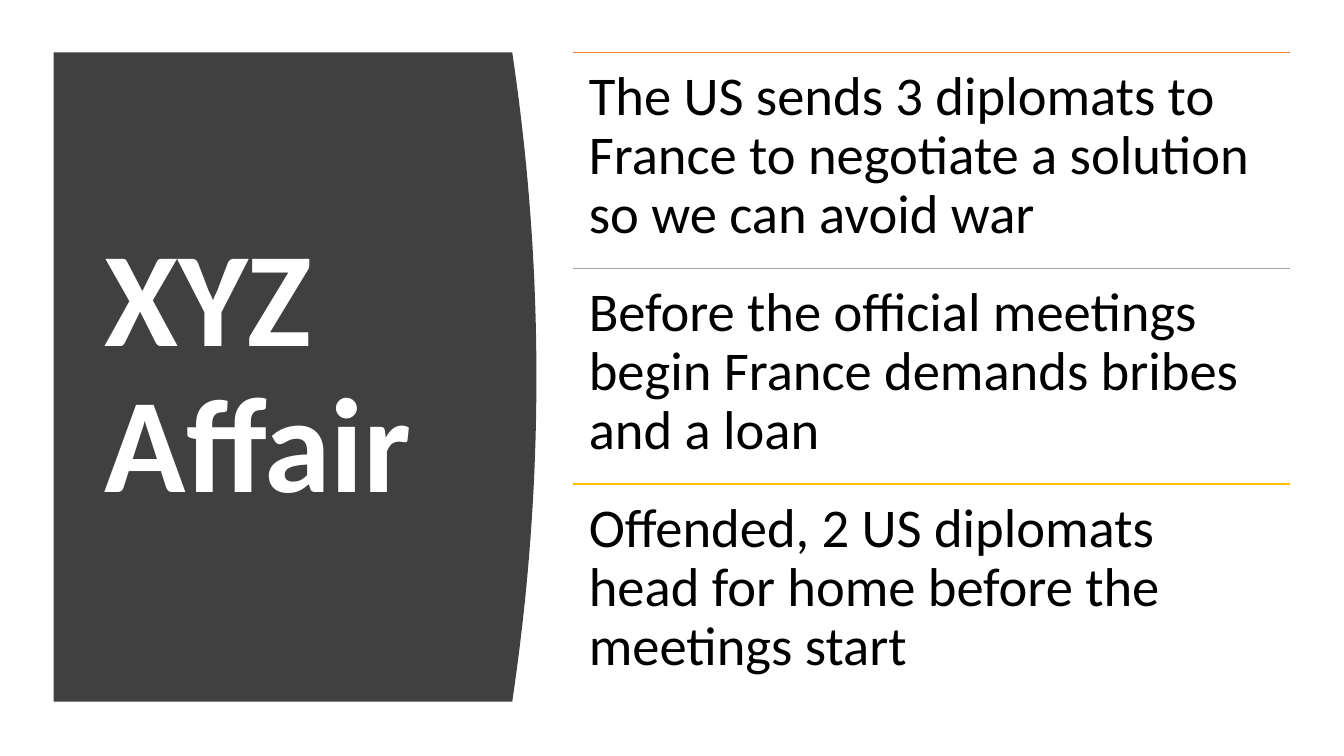
from lxml.etree import SubElement
from pptx import Presentation
from pptx.dml.color import RGBColor
from pptx.enum.shapes import MSO_CONNECTOR
from pptx.enum.text import MSO_ANCHOR
from pptx.oxml.ns import qn
from pptx.util import Cm, Pt

EVENTS = [
    ("ED7D31", "The US sends 3 diplomats to France to negotiate a solution so we can avoid war"),
    ("A5A5A5", "Before the official meetings begin France demands bribes and a loan"),
    ("FFC000", "Offended, 2 US diplomats head for home before the meetings start"),
]


def color(hex_string):
    """Return the colour for a hex string."""
    return RGBColor.from_string(hex_string)


def add_text(slide, box, text, inset, frame_format, font_format, font_color):
    """Place one wrapped paragraph of text in a box."""
    shape = slide.shapes.add_textbox(*(Cm(length) for length in box))
    frame = shape.text_frame
    frame.word_wrap = True
    for side in ("left", "top", "right", "bottom"):
        setattr(frame, f"margin_{side}", Cm(inset))
    for name, value in frame_format.items():
        setattr(frame, name, value)
    paragraph = frame.paragraphs[0]
    paragraph.line_spacing = 0.9
    run = paragraph.add_run()
    run.text = text
    for name, value in {"name": "Calibri", **font_format}.items():
        setattr(run.font, name, value)
    run.font.color.rgb = color(font_color)


def add_title_panel(slide, box, title):
    """Draw the dark panel with its bulging right side and the title on it."""
    left, top, width, height = box
    bulge, steps = 0.61, 40
    curve = []
    for step in range(steps + 1):
        offset = 2 * step / steps - 1
        x = left + width - bulge * offset ** 2
        curve.append((Cm(x), Cm(top + height * step / steps)))
    builder = slide.shapes.build_freeform(Cm(left), Cm(top), scale=1.0)
    builder.add_line_segments(curve + [(Cm(left), Cm(top + height))], close=True)
    panel = builder.convert_to_shape()
    panel.shadow.inherit = False
    panel.fill.solid()
    panel.fill.fore_color.rgb = color("404040")
    panel.line.fill.background()
    title_box = (left + 1.04, top + 1.5, 9.5, height - 3.05)
    add_text(slide, title_box, title, 0.25, {"vertical_anchor": MSO_ANCHOR.MIDDLE},
             {"size": Pt(96), "bold": True}, "FFFFFF")


def add_event_list(slide, box, events):
    """Stack the events in equal rows, each under its own coloured rule."""
    left, top, width, height = box
    row_height = height / len(events)
    for index, (rule_color, text) in enumerate(events):
        row_top = top + index * row_height
        rule = slide.shapes.add_connector(MSO_CONNECTOR.STRAIGHT, Cm(left), Cm(row_top),
                                          Cm(left + width), Cm(row_top))
        rule.line.color.rgb = color(rule_color)
        rule.line.width = Pt(1)
        SubElement(rule._element.spPr, qn("a:effectLst"))
        add_text(slide, (left, row_top, width, row_height), text, 0.41,
                 {"vertical_anchor": MSO_ANCHOR.TOP}, {"size": Pt(39)}, "000000")


def main():
    """Build the slide and save it."""
    presentation = Presentation()
    presentation.slide_width = Cm(33.87)
    presentation.slide_height = Cm(19.05)
    slide = presentation.slides.add_slide(presentation.slide_layouts[6])
    add_title_panel(slide, (1.35, 1.32, 12.17, 16.36), "XYZ Affair")
    add_event_list(slide, (14.43, 1.32, 18.08, 16.32), EVENTS)
    presentation.save("out.pptx")


if __name__ == "__main__":
    main()
